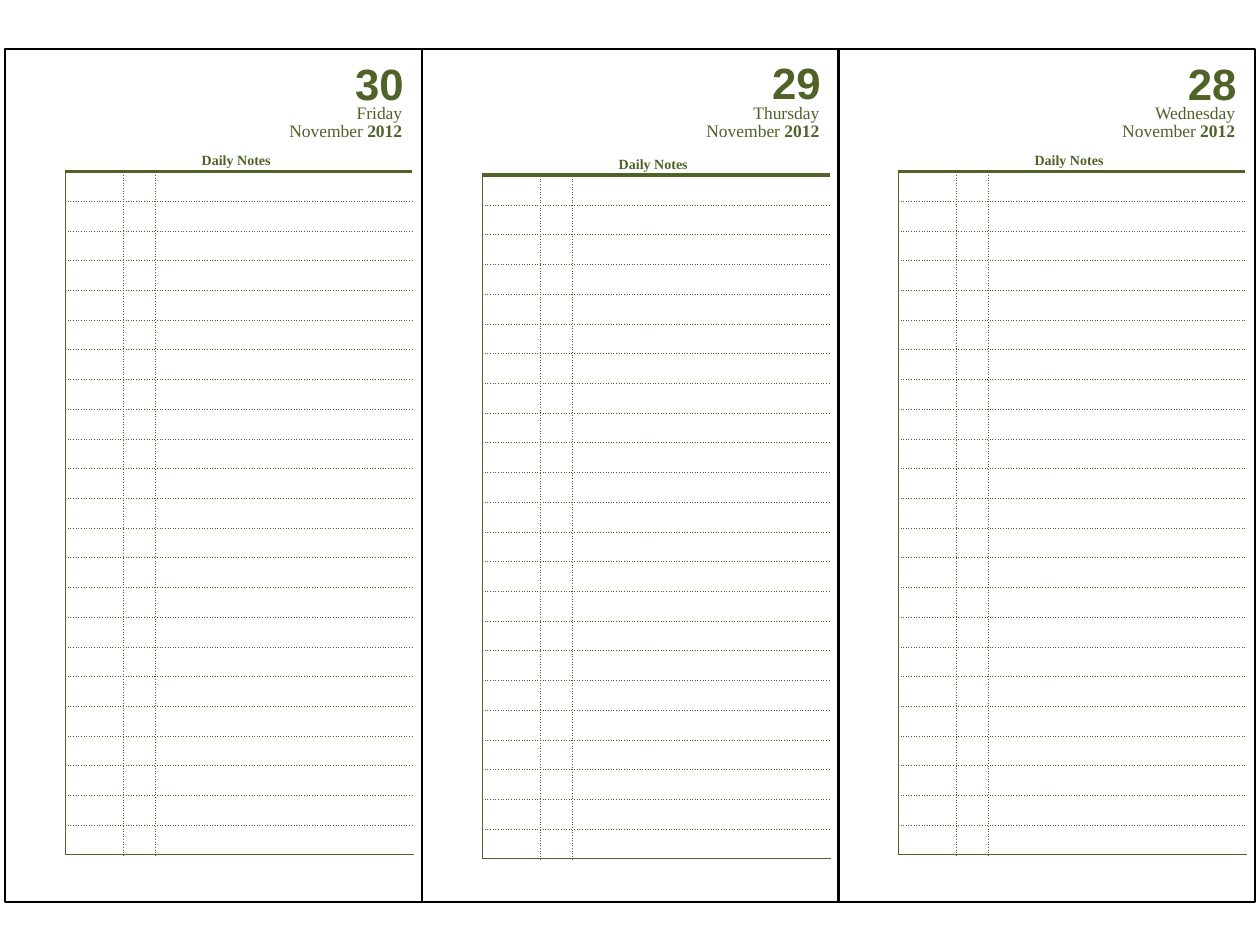
from lxml import etree
from pptx import Presentation
from pptx.dml.color import RGBColor
from pptx.enum.shapes import MSO_SHAPE
from pptx.enum.text import MSO_AUTO_SIZE, PP_ALIGN
from pptx.oxml.ns import qn
from pptx.util import Inches, Pt

RECTANGLE = MSO_SHAPE.RECTANGLE
FIT_TEXT = MSO_AUTO_SIZE.SHAPE_TO_FIT_TEXT
LEFT, CENTER, RIGHT = PP_ALIGN.LEFT, PP_ALIGN.CENTER, PP_ALIGN.RIGHT

COLORS = {"green": "4F6228", "black": "000000", "white": "FFFFFF"}
SERIF, SANS = "Times New Roman", "Arial"

# Border styles: colour, width in points, dash
DOTTED = ("green", 0.25, "dot")
THIN = ("green", 0.5, "solid")
THICK = ("green", 2.25, "solid")
HIDDEN = ("white", 1, "solid")

FRAME_TOP, FRAME_WIDTH, FRAME_HEIGHT = 0.39, 3.31, 6.77
COLUMN_WIDTHS = [0.46, 0.25, 2.05]
ROWS = 23
TABLE_HEIGHT = 5.43

# Frame left, day number, weekday, top of number, top of heading
DAYS = [
    (0.04, "30", "Friday", 0.40, 1.15),
    (3.35, "29", "Thursday", 0.39, 1.18),
    (6.65, "28", "Wednesday", 0.40, 1.15),
]


def add_text(box, lines, font, size, align, spacing=None):
    """Add a text box; each line is a list of (text, bold) runs."""
    frame = slide.shapes.add_textbox(*(Inches(v) for v in box)).text_frame
    frame.word_wrap = True
    frame.auto_size = FIT_TEXT
    for i, runs in enumerate(lines):
        paragraph = frame.paragraphs[0] if i == 0 else frame.add_paragraph()
        paragraph.alignment = align
        paragraph.line_spacing = spacing
        paragraph.font.name = font
        paragraph.font.size = Pt(size)
        paragraph.font.color.rgb = RGBColor.from_string(COLORS["green"])
        for text, bold in runs:
            run = paragraph.add_run()
            run.text = text
            run.font.bold = bold


def set_borders(cell, borders):
    """Draw the left, right, top and bottom borders of a cell."""
    properties = cell._tc.get_or_add_tcPr()
    for i, (side, (color, width, dash)) in enumerate(zip("LRTB", borders)):
        line = etree.Element(qn(f"a:ln{side}"), w=str(Pt(width)))
        fill = etree.SubElement(line, qn("a:solidFill"))
        etree.SubElement(fill, qn("a:srgbClr"), val=COLORS[color])
        etree.SubElement(line, qn("a:prstDash"), val=dash)
        properties.insert(i, line)


prs = Presentation()
prs.slide_width, prs.slide_height = Inches(10), Inches(7.5)
slide = prs.slides.add_slide(prs.slide_layouts[6])

for left, number, weekday, number_top, heading_top in DAYS:
    page = slide.shapes.add_shape(
        RECTANGLE, Inches(left), Inches(FRAME_TOP), Inches(FRAME_WIDTH), Inches(FRAME_HEIGHT))
    page.shadow.inherit = False
    page.fill.background()
    page.line.color.rgb = RGBColor.from_string(COLORS["black"])
    page.line.width = Pt(1)

    add_text((left + 2.68, number_top, 0.63, 0.52), [[(number, True)]], SANS, 25, LEFT)
    add_text((left + 1.44, 0.79, 1.81, 0.38),
             [[(weekday, False)], [("November ", False), ("2012", True)]],
             SERIF, 10, RIGHT, Pt(10))
    add_text((left + 0.43, heading_top, 2.81, 0.24), [[("Daily Notes", True)]],
             SERIF, 8, CENTER, Pt(10))

    notes = slide.shapes.add_table(
        ROWS, len(COLUMN_WIDTHS), Inches(left + 0.48), Inches(heading_top + 0.21),
        Inches(sum(COLUMN_WIDTHS)), Inches(TABLE_HEIGHT)).table
    notes.first_row = notes.horz_banding = False
    for column, width in zip(notes.columns, COLUMN_WIDTHS):
        column.width = Inches(width)
    for r, row in enumerate(notes.rows):
        row.height = Inches(TABLE_HEIGHT / ROWS)
        for c, cell in enumerate(row.cells):
            cell.fill.background()
            cell.margin_top = cell.margin_bottom = 0
            # The size of an empty paragraph is held by its end mark
            etree.SubElement(cell.text_frame.paragraphs[0]._p, qn("a:endParaRPr"), sz="800")
            set_borders(cell, (
                THIN if c == 0 else DOTTED,
                HIDDEN if c == len(COLUMN_WIDTHS) - 1 else DOTTED,
                THICK if r == 0 else DOTTED,
                THIN if r == ROWS - 1 else DOTTED,
            ))

prs.save("out.pptx")
